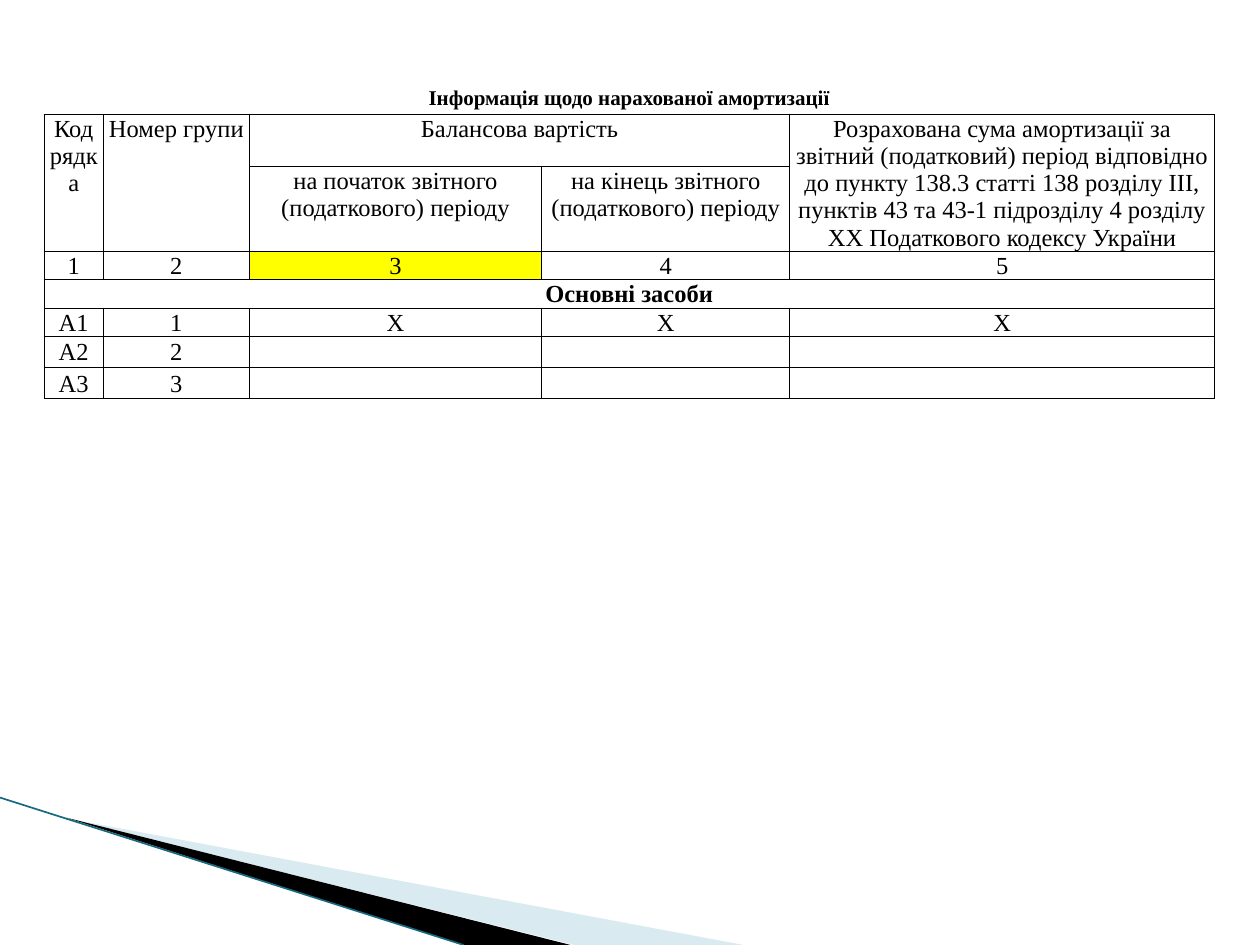
from lxml.etree import SubElement
from pptx import Presentation
from pptx.dml.color import RGBColor
from pptx.enum.shapes import MSO_CONNECTOR
from pptx.enum.text import MSO_ANCHOR, PP_ALIGN
from pptx.oxml.ns import qn
from pptx.util import Inches, Pt

BLACK = RGBColor(0, 0, 0)
PALE_BLUE = RGBColor(0xA0, 0xCB, 0xDC)
TEAL = RGBColor(0x16, 0x69, 0x7F)
YELLOW = RGBColor(0xFF, 0xFF, 0)
FONT = "Times New Roman"

ROWS = [
    ["Інформація щодо нарахованої амортизації"],
    ["Код рядка", "Номер групи", "Балансова вартість", "",
     "Розрахована сума амортизації за звітний (податковий) період відповідно до "
     "пункту 138.3 статті 138 розділу III, пунктів 43 та 43-1 підрозділу 4 "
     "розділу XX Податкового кодексу України"],
    ["", "", "на початок звітного (податкового) періоду",
     "на кінець звітного (податкового) періоду"],
    ["1", "2", "3", "4", "5"],
    ["Основні засоби"],
    ["А1", "1", "Х", "Х", "Х"],
    ["А2", "2"],
    ["А3", "3"],
]
COLUMN_WIDTHS = [0.47, 1.16, 2.32, 1.97, 3.37]
ROW_HEIGHTS = [0.23, 0.41, 0.67] + [0.22] * 5
TABLE_LEFT, TABLE_TOP = 0.35, 0.68
MERGES = [((0, 0), (0, 4)), ((1, 0), (2, 0)), ((1, 1), (2, 1)),
          ((1, 2), (1, 3)), ((1, 4), (2, 4)), ((4, 0), (4, 4))]
TITLE_ROW, SECTION_ROW, NUMBER_ROW = 0, 4, 3
HIGHLIGHT = (3, 2)
LAST_COLUMN = len(COLUMN_WIDTHS) - 1

WEDGES = [
    ([(0.55, 6.5), (5.9, 7.5), (4.56, 7.5)], PALE_BLUE, 40),
    ([(0.53, 6.49), (4.53, 7.5), (3.68, 7.5)], BLACK, 100),
]
EDGE = (0, 6.33, 3.68, 7.5)


def set_values(target, values):
    for name, value in values.items():
        setattr(target, name, value)


def add_wedge(page, points, color, opacity):
    corners = [(Inches(x), Inches(y)) for x, y in points]
    builder = page.shapes.build_freeform(*corners[0])
    builder.add_line_segments(corners[1:], close=True)
    wedge = builder.convert_to_shape()
    wedge.shadow.inherit = False
    wedge.line.fill.background()
    wedge.fill.solid()
    wedge.fill.fore_color.rgb = color
    if opacity < 100:
        tint = wedge.fill._xPr.find(".//" + qn("a:srgbClr"))
        SubElement(tint, qn("a:alpha"), val=str(opacity * 1000))


def add_edge(page):
    edge = page.shapes.add_connector(MSO_CONNECTOR.STRAIGHT, *map(Inches, EDGE))
    set_values(edge.line, {"width": Pt(0.95)})
    edge.line.color.rgb = TEAL
    SubElement(edge._element.spPr, qn("a:effectLst"))


def set_borders(cell, drawn_sides):
    properties = cell._tc.get_or_add_tcPr()
    for side in "LRTB":
        border = SubElement(properties, qn(f"a:ln{side}"), w=str(Pt(0.5)))
        if side in drawn_sides:
            fill = SubElement(border, qn("a:solidFill"))
            SubElement(fill, qn("a:srgbClr"), val=str(BLACK))
        else:
            SubElement(border, qn("a:noFill"))


def format_cell(cell, row, column, text):
    if row < NUMBER_ROW:
        anchor = MSO_ANCHOR.TOP
    elif column == LAST_COLUMN:
        anchor = MSO_ANCHOR.BOTTOM
    else:
        anchor = MSO_ANCHOR.MIDDLE
    margin = Inches(0.01)
    set_values(cell, {"margin_left": margin, "margin_right": margin, "margin_top": margin,
                      "margin_bottom": 0, "vertical_anchor": anchor})
    set_borders(cell, "B" if row == TITLE_ROW else "LRTB")
    if (row, column) == HIGHLIGHT:
        cell.fill.solid()
        cell.fill.fore_color.rgb = YELLOW
    else:
        cell.fill.background()
    size = 12 if row == TITLE_ROW else 14
    para = cell.text_frame.paragraphs[0]
    para.alignment = PP_ALIGN.CENTER
    if text:
        span = para.add_run()
        span.text = text
        set_values(span.font, {"name": FONT, "size": Pt(size),
                               "bold": row in (TITLE_ROW, SECTION_ROW)})
        span.font.color.rgb = BLACK
    else:
        para._p.get_or_add_endParaRPr().set("sz", str(size * 100))


def add_grid(page):
    area = (TABLE_LEFT, TABLE_TOP, sum(COLUMN_WIDTHS), sum(ROW_HEIGHTS))
    table = page.shapes.add_table(len(ROWS), len(COLUMN_WIDTHS), *map(Inches, area)).table
    set_values(table, {"first_row": False, "horz_banding": False})
    for column, width in zip(table.columns, COLUMN_WIDTHS):
        column.width = Inches(width)
    for row, height in zip(table.rows, ROW_HEIGHTS):
        row.height = Inches(height)
    for row, texts in enumerate(ROWS):
        for column in range(len(COLUMN_WIDTHS)):
            text = texts[column] if column < len(texts) else ""
            format_cell(table.cell(row, column), row, column, text)
    for first, last in MERGES:
        table.cell(*first).merge(table.cell(*last))


def main():
    deck = Presentation()
    set_values(deck, {"slide_width": Inches(10), "slide_height": Inches(7.5)})
    page = deck.slides.add_slide(deck.slide_layouts[6])
    for points, color, opacity in WEDGES:
        add_wedge(page, points, color, opacity)
    add_edge(page)
    add_grid(page)
    deck.save("out.pptx")


if __name__ == "__main__":
    main()
